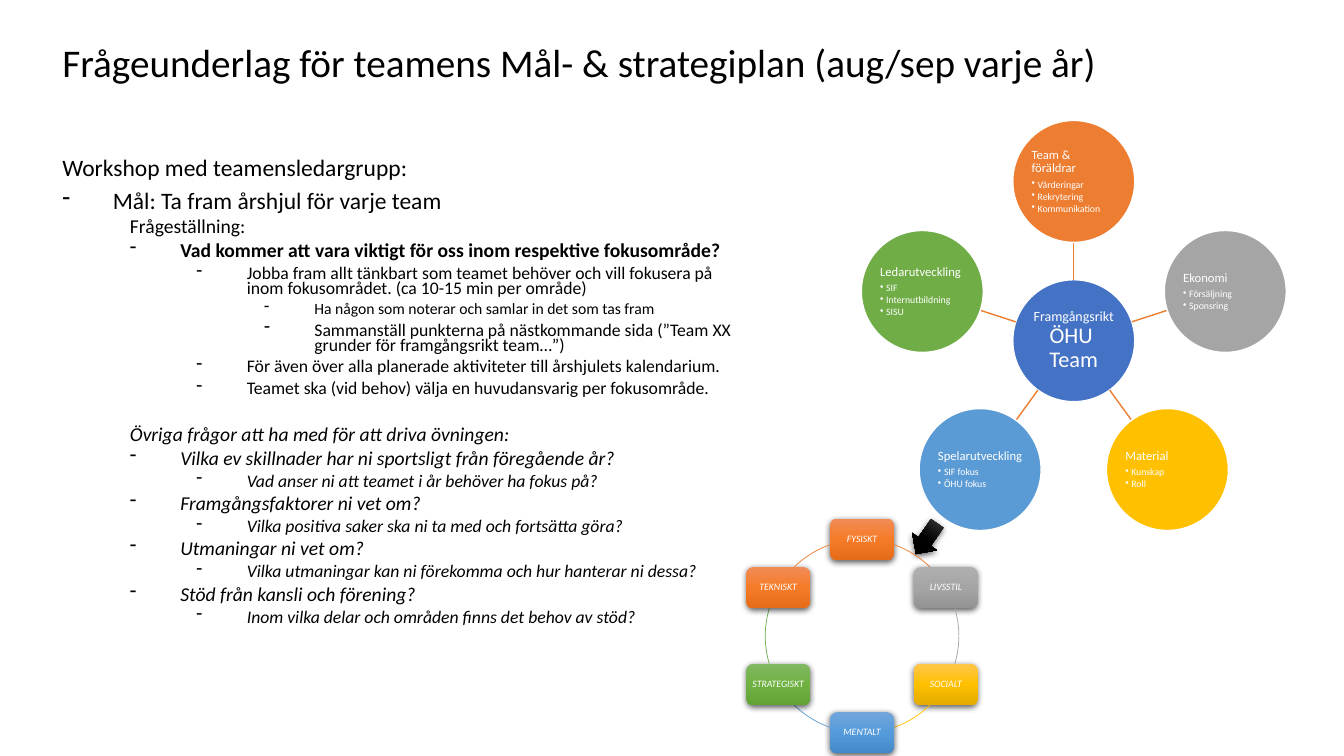
import math
from pptx import Presentation, util as u
from pptx.dml.color import RGBColor
from pptx.enum import shapes, text
from pptx.oxml import parse_xml
from pptx.oxml.ns import qn

NS = 'xmlns:a="http://schemas.openxmlformats.org/drawingml/2006/main"'
COLORS = {
    "text": "000000", "white": "FFFFFF", "hub": "4472C4", "orange": "ED7D31",
    "gray": "A5A5A5", "yellow": "FFC000", "blue": "5B9BD5", "green": "70AD47",
}
GRADIENTS = {
    "text": ("4B4B4B", "000000", "000000"),
    "orange": ("F18C57", "F67B28", "E56C19"),
    "gray": ("AFAFAF", "A5A5A5", "939393"),
    "yellow": ("FFC64B", "FFC000", "E3AB00"),
    "blue": ("71A6DB", "559BDB", "448ACA"),
    "green": ("81B861", "6FB242", "62A336"),
}
RGB = {name: RGBColor.from_string(value) for name, value in COLORS.items()}


def add_text(p, lines, size, color, bullet=None, margin=0, hang=0,
             bold=False, italic=False):
    """Add runs separated by line breaks, with an optional hanging bullet."""
    pPr = p._p.get_or_add_pPr()
    pPr.set("marL", str(u.Inches(margin)))
    pPr.set("indent", str(u.Inches(-hang)))
    if bullet:
        pPr.append(parse_xml(f'<a:buChar {NS} char="{bullet}"/>'))
    for i, line in enumerate(lines.split("\n")):
        if i:
            p.add_line_break()
        r = p.add_run()
        r.text = line
        r.font.name, r.font.size = "Calibri", u.Pt(size)
        r.font.bold, r.font.italic = bold, italic
        r.font.color.rgb = RGB[color]


def add_glossy(kind, x, y, w, h, color):
    """Add a shape with a three-stop gradient and a soft shadow."""
    s = sh.add_shape(kind, u.Inches(x), u.Inches(y), u.Inches(w), u.Inches(h))
    s.line.fill.background()
    s.shadow.inherit = False
    spPr = s._element.spPr
    stops = "".join(
        f'<a:gs pos="{i * 50000}"><a:srgbClr val="{c}"/></a:gs>'
        for i, c in enumerate(GRADIENTS[color]))
    spPr.insert(2, parse_xml(
        f'<a:gradFill {NS} rotWithShape="1"><a:gsLst>{stops}</a:gsLst>'
        '<a:lin ang="5400000" scaled="0"/></a:gradFill>'))
    spPr.find(qn("a:effectLst")).append(parse_xml(
        f'<a:outerShdw {NS} blurRad="57150" dist="19050" dir="5400000" '
        'algn="ctr" rotWithShape="0"><a:srgbClr val="000000">'
        '<a:alpha val="63000"/></a:srgbClr></a:outerShdw>'))
    return s


prs = Presentation()
prs.slide_width, prs.slide_height = u.Inches(13.33), u.Inches(7.5)
sh = prs.slides.add_slide(prs.slide_layouts[6]).shapes

# Title
tf = sh.add_textbox(u.Inches(0.52), u.Inches(0.1), u.Inches(11.53), u.Inches(1.09)).text_frame
tf.word_wrap = True
tf.vertical_anchor = text.MSO_ANCHOR.MIDDLE
tf.paragraphs[0].line_spacing = 0.9
add_text(tf.paragraphs[0], "Frågeunderlag för teamens Mål- & strategiplan (aug/sep varje år)", 28, "text")

# Workshop outline: level, size, space before, bullet, style, wording
outline = [
    (0, 16.8, 0, None, "", "Workshop med teamensledargrupp:"),
    (0, 16.8, 10, "-", "", "Mål: Ta fram årshjul för varje team"),
    (1, 14, 5, None, "", "Frågeställning:"),
    (1, 14, 5, "-", "b", "Vad kommer att vara viktigt för oss inom respektive fokusområde?"),
    (2, 12.6, 5, "-", "", "Jobba fram allt tänkbart som teamet behöver och vill fokusera på "
                          "inom fokusområdet. (ca 10-15 min per område)"),
    (3, 11.2, 5, "-", "", "Ha någon som noterar och samlar in det som tas fram"),
    (3, 12.6, 5, "-", "", "Sammanställ punkterna på nästkommande sida "
                          "(”Team XX grunder för framgångsrikt team…”)"),
    (2, 12.6, 5, "-", "", "För även över alla planerade aktiviteter till årshjulets kalendarium."),
    (2, 12.6, 5, "-", "", "Teamet ska (vid behov) välja en huvudansvarig per fokusområde."),
    (1, 14, 22, None, "i", "Övriga frågor att ha med för att driva övningen:"),
    (1, 14, 5, "-", "i", "Vilka ev skillnader har ni sportsligt från föregående år?"),
    (2, 12.6, 5, "-", "i", "Vad anser ni att teamet i år behöver ha fokus på?"),
    (1, 14, 5, "-", "i", "Framgångsfaktorer ni vet om?"),
    (2, 12.6, 5, "-", "i", "Vilka positiva saker ska ni ta med och fortsätta göra?"),
    (1, 14, 5, "-", "i", "Utmaningar ni vet om?"),
    (2, 12.6, 5, "-", "i", "Vilka utmaningar kan ni förekomma och hur hanterar ni dessa?"),
    (1, 14, 5, "-", "i", "Stöd från kansli och förening?"),
    (2, 12.6, 5, "-", "i", "Inom vilka delar och områden finns det behov av stöd?"),
]
tf = sh.add_textbox(u.Inches(0.52), u.Inches(1.54), u.Inches(6.99), u.Inches(5.45)).text_frame
tf.word_wrap = True
for i, (level, size, before, bullet, style, line) in enumerate(outline):
    p = tf.add_paragraph() if i else tf.paragraphs[0]
    p.level = level
    p.line_spacing = 0.7
    p.space_before = u.Pt(before)
    hang = 0.5 if bullet else 0
    add_text(p, line, size, "text", bullet, round(level * 2 / 3, 2) + hang, hang,
             style == "b", style == "i")

# Focus areas: hub in the middle, five circles clockwise from the top
HUB_X, HUB_Y, SPOKE, DIAMETER = 10.65, 3.38, 1.58, 1.21
areas = [
    ("hub", "Framgångsrikt", []),
    ("orange", "Team & föräldrar", ["Värderingar", "Rekrytering", "Kommunikation"]),
    ("gray", "Ekonomi", ["Försäljning", "Sponsring"]),
    ("yellow", "Material", ["Kunskap", "Roll"]),
    ("blue", "Spelarutveckling", ["SIF fokus", "ÖHU fokus"]),
    ("green", "Ledarutveckling", ["SIF", "Internutbildning", "SISU"]),
]
for i, (color, heading, points) in enumerate(areas):
    is_hub = i == 0
    angle = math.radians(72 * (i - 1) - 90)
    dx, dy = math.cos(angle), math.sin(angle)
    reach = 0 if is_hub else SPOKE
    if not is_hub:
        start, end = DIAMETER / 2, SPOKE - DIAMETER / 2
        c = sh.add_connector(
            shapes.MSO_CONNECTOR.STRAIGHT,
            u.Inches(HUB_X + start * dx), u.Inches(HUB_Y + start * dy),
            u.Inches(HUB_X + end * dx), u.Inches(HUB_Y + end * dy))
        c.line.color.rgb, c.line.width = RGB["orange"], u.Pt(1)
        c._element.spPr.append(parse_xml(f"<a:effectLst {NS}/>"))
    s = sh.add_shape(
        shapes.MSO_SHAPE.OVAL,
        u.Inches(HUB_X + reach * dx - DIAMETER / 2),
        u.Inches(HUB_Y + reach * dy - DIAMETER / 2),
        u.Inches(DIAMETER), u.Inches(DIAMETER))
    s.shadow.inherit = False
    s.fill.solid()
    s.fill.fore_color.rgb = RGB[color]
    s.line.color.rgb, s.line.width = RGB["white"], u.Pt(1)
    tf = s.text_frame
    tf.word_wrap = True
    tf.vertical_anchor = text.MSO_ANCHOR.MIDDLE
    tf.margin_left = tf.margin_right = tf.margin_top = tf.margin_bottom = u.Inches(0.01)
    p = tf.paragraphs[0]
    p.alignment = text.PP_ALIGN.CENTER if is_hub else text.PP_ALIGN.LEFT
    p.line_spacing, p.space_after = 0.9, u.Pt(3)
    add_text(p, heading, 10 if is_hub else 9, "white")
    if is_hub:
        p.add_line_break()
        add_text(p, "ÖHU \nTeam", 16, "white")
    for point in points:
        p = tf.add_paragraph()
        p.level = 1
        p.alignment = text.PP_ALIGN.LEFT
        p.line_spacing, p.space_after = 0.9, u.Pt(1)
        add_text(p, point, 7, "white", "•", 0.06, 0.06)

# Arrow from player development to the wheel
add_glossy(shapes.MSO_SHAPE.DOWN_ARROW, 9.04, 5.16, 0.3, 0.37, "text").rotation = 34.8

# Player wheel: six boxes clockwise from the top, each followed by an arc
WHEEL_X, WHEEL_Y, RADIUS, BOX_W, BOX_H = 8.55, 6.31, 0.96, 0.63, 0.41
wheel = [
    ("FYSISKT", "orange", -70.5, -45.6), ("LIVSSTIL", "gray", -16.6, 16.6),
    ("SOCIALT", "yellow", 45.6, 70.5), ("MENTALT", "blue", 109.5, 134.4),
    ("STRATEGISKT", "green", 163.4, 196.6), ("TEKNISKT", "orange", 225.6, 250.5),
]
for i, (label, color, arc_start, arc_end) in enumerate(wheel):
    angle = math.radians(60 * i - 90)
    s = add_glossy(
        shapes.MSO_SHAPE.ROUNDED_RECTANGLE,
        WHEEL_X + RADIUS * math.cos(angle) - BOX_W / 2,
        WHEEL_Y + RADIUS * math.sin(angle) - BOX_H / 2, BOX_W, BOX_H, color)
    tf = s.text_frame
    tf.word_wrap = True
    tf.vertical_anchor = text.MSO_ANCHOR.MIDDLE
    tf.margin_left = tf.margin_right = tf.margin_top = tf.margin_bottom = u.Inches(0.03)
    p = tf.paragraphs[0]
    p.alignment, p.line_spacing = text.PP_ALIGN.CENTER, 0.9
    add_text(p, label, 7, "white", italic=True)
    arc = sh.add_shape(
        shapes.MSO_SHAPE.ARC, u.Inches(WHEEL_X - RADIUS), u.Inches(WHEEL_Y - RADIUS),
        u.Inches(2 * RADIUS), u.Inches(2 * RADIUS))
    arc.shadow.inherit = False
    arc.fill.background()
    arc.line.color.rgb, arc.line.width = RGB[color], u.Pt(0.5)
    # Arc adjustments count 0.6 per degree
    arc.adjustments[0] = arc_start % 360 * 0.6
    arc.adjustments[1] = arc_end % 360 * 0.6

prs.save("out.pptx")
